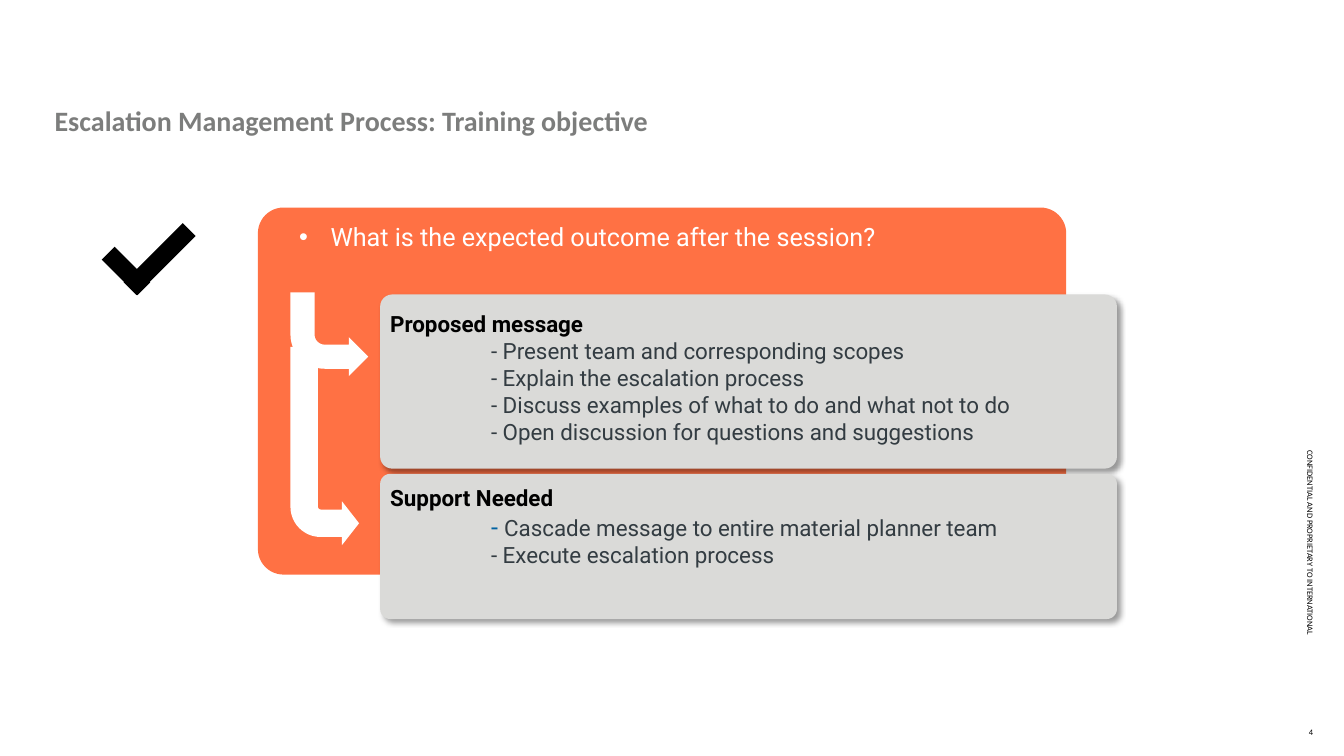
"""Build the training objective slide."""
from lxml.etree import SubElement
from pptx import Presentation
from pptx.dml.color import RGBColor
from pptx.enum.shapes import MSO_SHAPE
from pptx.enum.text import MSO_ANCHOR, MSO_AUTO_SIZE, PP_ALIGN
from pptx.oxml.ns import qn
from pptx.util import Cm, Pt

BLACK, WHITE, ORANGE, CARD = "000000", "FFFFFF", "FF7144", "DADAD8"
TITLE_GRAY, TEXT_GRAY, BLUE = "7C7D7C", "333C42", "0062A2"
CARD_LEFT, CARD_WIDTH = 9.58, 18.57
ARROW_LEFT = 7.32

MESSAGE_ITEMS = [
    [("- Present team and corresponding scopes", 16, TEXT_GRAY)],
    [("- Explain the escalation process", 16, TEXT_GRAY)],
    [("- Discuss examples of what to do and what not to do", 16, TEXT_GRAY)],
    [("- Open discussion for questions and suggestions", 16, TEXT_GRAY)],
]
SUPPORT_ITEMS = [
    [("- ", 18, BLUE), ("Cascade message to entire material planner team", 16, TEXT_GRAY)],
    [("- Execute escalation process", 16, TEXT_GRAY)],
]


def color(value):
    return RGBColor.from_string(value)


def place(shape, left, top, width, height):
    shape.left, shape.top = Cm(left), Cm(top)
    shape.width, shape.height = Cm(width), Cm(height)


def bring_to_front(shape):
    shape.element.getparent().append(shape.element)


def add_run(paragraph, text, size, fill, font="Roboto", bold=False):
    run = paragraph.add_run()
    run.text = text
    run.font.name = font
    run.font.size = Pt(size)
    run.font.bold = bold
    run.font.color.rgb = color(fill)


def set_indent(paragraph, margin, first_line=0, bullet=None):
    properties = paragraph._p.get_or_add_pPr()
    properties.set("marL", str(Cm(margin)))
    properties.set("indent", str(Cm(first_line)))
    if bullet:
        SubElement(properties, qn("a:buFont")).set("typeface", "Arial")
        SubElement(properties, qn("a:buChar")).set("char", bullet)
    else:
        SubElement(properties, qn("a:buNone"))


def add_shape(shapes, kind, box, fill, adjustments=(), rotation=0):
    shape = shapes.add_shape(kind, *map(Cm, box))
    shape.shadow.inherit = False
    shape.fill.solid()
    shape.fill.fore_color.rgb = color(fill)
    shape.line.fill.background()
    shape.rotation = rotation
    for index, value in enumerate(adjustments):
        shape.adjustments[index] = value
    return shape


def add_card(slide, top, height):
    card = add_shape(slide.shapes, MSO_SHAPE.ROUNDED_RECTANGLE,
                     (CARD_LEFT, top, CARD_WIDTH, height), CARD, [0.07])
    effects = card.element.spPr.find(qn("a:effectLst"))
    shadow = SubElement(effects, qn("a:outerShdw"), blurRad=str(Pt(4)),
                        dist=str(Pt(3)), dir="2700000", algn="tl", rotWithShape="0")
    shadow_color = SubElement(shadow, qn("a:srgbClr"), val=BLACK)
    SubElement(shadow_color, qn("a:alpha"), val="40000")


def add_arrow(slide, top, width, height, adjustments):
    arrow = add_shape(slide.shapes, MSO_SHAPE.BENT_ARROW,
                      (ARROW_LEFT, top, width, height), WHITE, adjustments)
    arrow.element.spPr.find(qn("a:xfrm")).set("flipV", "1")


def add_check_mark(slide):
    group = slide.shapes.add_group_shape()
    for box, angle in (((2.97, 6.3, 2.11, 0.46), 315), ((2.54, 6.6, 1.27, 0.46), 45)):
        add_shape(group.shapes, MSO_SHAPE.RECTANGLE, box, BLACK, rotation=angle)


def add_text(slide, box, text, size, fill, font="Roboto", anchor=MSO_ANCHOR.TOP, inset=True):
    text_box = slide.shapes.add_textbox(*map(Cm, box))
    frame = text_box.text_frame
    frame.word_wrap = True
    frame.vertical_anchor = anchor
    if not inset:
        frame.margin_left = frame.margin_right = 0
        frame.margin_top = frame.margin_bottom = 0
    add_run(frame.paragraphs[0], text, size, fill, font)
    return text_box


def fill_title(slide, text):
    title = slide.shapes.title
    place(title, 1.12, 2.46, 18.8, 1.12)
    frame = title.text_frame
    frame.auto_size = MSO_AUTO_SIZE.NONE
    frame.vertical_anchor = MSO_ANCHOR.MIDDLE
    frame.paragraphs[0].alignment = PP_ALIGN.LEFT
    add_run(frame.paragraphs[0], text, 20, TITLE_GRAY, "Calibri", True)
    bring_to_front(title)


def fill_list(placeholder, box, heading, items):
    place(placeholder, *box)
    frame = placeholder.text_frame
    frame.auto_size = MSO_AUTO_SIZE.NONE
    frame.vertical_anchor = MSO_ANCHOR.TOP
    paragraph = frame.paragraphs[0]
    paragraph.space_before = Pt(0)
    set_indent(paragraph, 0)
    add_run(paragraph, heading, 16, BLACK, bold=True)
    for runs in items:
        paragraph = frame.add_paragraph()
        paragraph.space_before = Pt(0)
        set_indent(paragraph, 2.54)
        for run in runs:
            add_run(paragraph, *run)
    bring_to_front(placeholder)


def main():
    presentation = Presentation()
    presentation.slide_width, presentation.slide_height = Cm(33.87), Cm(19.05)
    slide = presentation.slides.add_slide(presentation.slide_layouts.get_by_name("Two Content"))
    message, support = slide.placeholders[1], slide.placeholders[2]

    notice = add_text(slide, (29.85, 14.2, 6.35, 0.64),
                      "CONFIDENTIAL AND PROPRIETARY TO INTERNATIONAL", 6, BLACK,
                      "Calibri", MSO_ANCHOR.MIDDLE, inset=False)
    notice.rotation = 90
    add_shape(slide.shapes, MSO_SHAPE.ROUNDED_RECTANGLE,
              (6.5, 5.23, 20.37, 9.25), ORANGE, [0.07])
    add_check_mark(slide)
    question = add_text(slide, (7.29, 5.46, 16.94, 1.02),
                        "What is the expected outcome after the session?", 18, WHITE)
    set_indent(question.text_frame.paragraphs[0], 0.79, -0.79, "•")

    add_arrow(slide, 7.37, 1.96, 2.11, [0.31, 0.25, 0.25, 0.44])
    add_card(slide, 7.42, 4.39)
    fill_list(message, (CARD_LEFT, 7.7, 17.3, 3.68), "Proposed message", MESSAGE_ITEMS)
    add_card(slide, 11.94, 3.66)
    add_arrow(slide, 8.74, 1.73, 5, [0.4, 0.32, 0.25, 0.44])
    fill_list(support, (CARD_LEFT, 12.07, 16.74, 2.39), "Support Needed", SUPPORT_ITEMS)
    fill_title(slide, "Escalation Management Process: Training objective")

    number = add_text(slide, (32.72, 17.93, 0.64, 0.64), "4", 6, BLACK,
                      "Calibri", MSO_ANCHOR.BOTTOM, inset=False)
    number.text_frame.paragraphs[0].alignment = PP_ALIGN.CENTER
    presentation.save("out.pptx")


if __name__ == "__main__":
    main()
